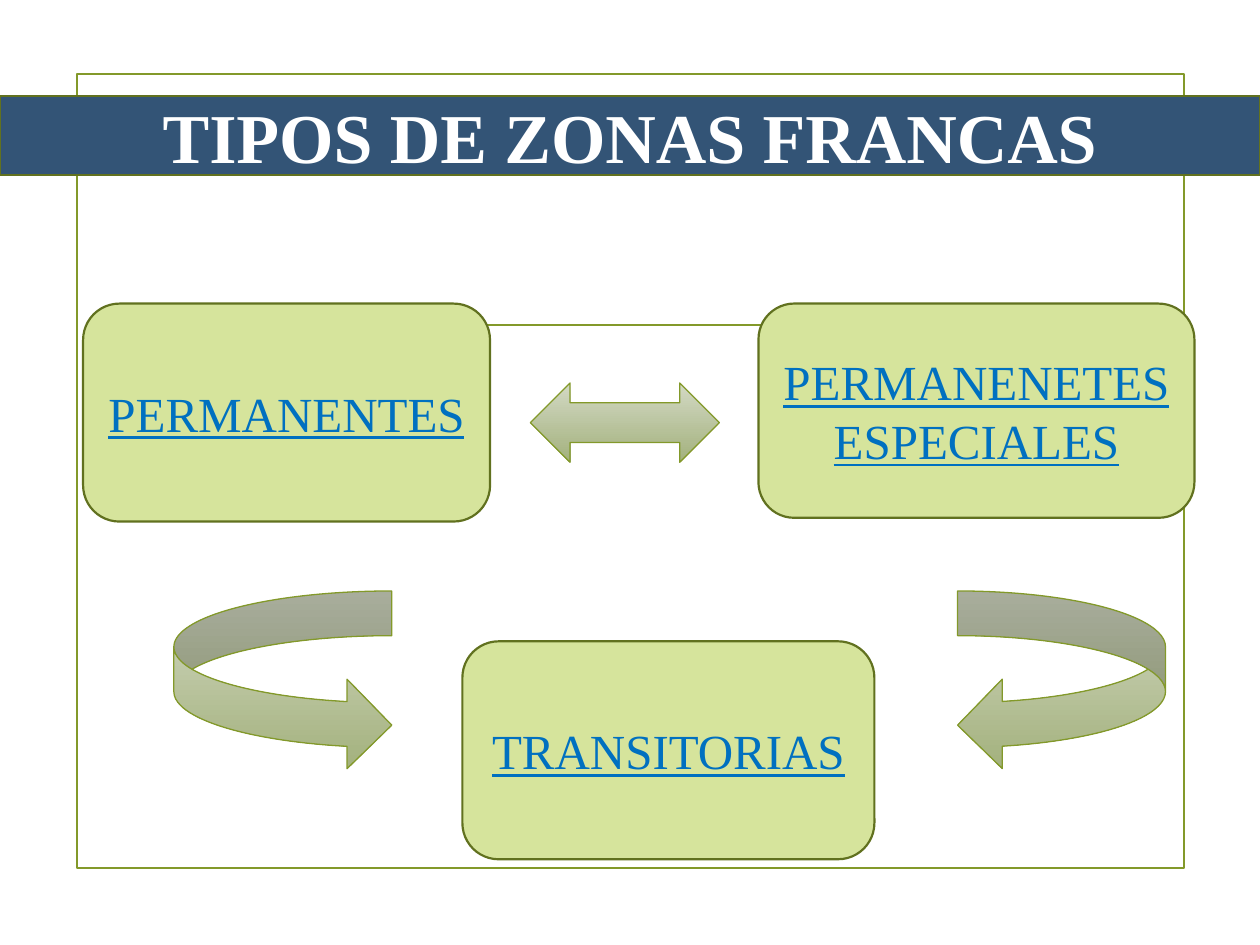
from typing import NamedTuple

from pptx import Presentation
from pptx.dml.color import RGBColor
from pptx.enum.shapes import MSO_CONNECTOR, MSO_SHAPE as Shp
from pptx.enum.text import MSO_ANCHOR, PP_ALIGN
from pptx.oxml.ns import qn
from pptx.util import Inches, Pt

OLIVE, DARK_OLIVE, NAVY, LIME = "83992A", "61711F", "335476", "D6E49C"
ARROW_GRADIENT = ("D3D9C4", "A3B17D")
FONT = "Times New Roman"
TITLE_FORMAT = {"name": FONT, "size": Pt(40), "bold": True}
TYPE_FORMAT = {"name": FONT, "size": Pt(28), "underline": True}


class Box(NamedTuple):
    left: float
    top: float
    width: float
    height: float


class ZoneType(NamedTuple):
    text: str
    box: Box


class Arrow(NamedTuple):
    preset: Shp
    box: Box


ZONE_TYPES = [
    ZoneType("PERMANENTES", Box(0.66, 2.41, 3.23, 1.73)),
    ZoneType("PERMANENETES ESPECIALES", Box(6.02, 2.41, 3.46, 1.7)),
    ZoneType("TRANSITORIAS", Box(3.67, 5.09, 3.27, 1.73)),
]
ARROWS = [
    Arrow(Shp.CURVED_RIGHT_ARROW, Box(1.38, 4.69, 1.73, 1.42)),
    Arrow(Shp.CURVED_LEFT_ARROW, Box(7.6, 4.69, 1.65, 1.42)),
    Arrow(Shp.LEFT_RIGHT_ARROW, Box(4.21, 3.04, 1.5, 0.63)),
]


def rgb(value: str) -> RGBColor:
    return RGBColor.from_string(value)


def set_line(line, color: str, width: float) -> None:
    line.color.rgb = rgb(color)
    line.width = Pt(width)


def add_outlined(s, preset: Shp, box: Box, color: str, width: float = 1.25):
    """Add a shape without shadow; its fill is left to the caller."""
    sp = s.shapes.add_shape(preset, *map(Inches, box))
    sp.shadow.inherit = False
    set_line(sp.line, color, width)
    return sp


def add_label(s, preset: Shp, box: Box, fill: str, text: str, color: str, fmt: dict) -> None:
    sp = add_outlined(s, preset, box, DARK_OLIVE)
    sp.fill.solid()
    sp.fill.fore_color.rgb = rgb(fill)
    tf = sp.text_frame
    tf.word_wrap = True
    tf.vertical_anchor = MSO_ANCHOR.MIDDLE
    p = tf.paragraphs[0]
    p.alignment = PP_ALIGN.CENTER
    r = p.add_run()
    r.text = text
    r.font.color.rgb = rgb(color)
    for name, value in fmt.items():
        setattr(r.font, name, value)


def add_arrow(s, arrow: Arrow) -> None:
    fill = add_outlined(s, arrow.preset, arrow.box, OLIVE, 0.75).fill
    fill.gradient()
    fill.gradient_angle = 270
    for stop, color in zip(fill.gradient_stops, ARROW_GRADIENT):
        stop.color.rgb = rgb(color)
    for stop, position in zip(fill.gradient_stops, (0, 1)):
        stop.position = position


def add_frame(s) -> None:
    """Draw the page border and the rule across it."""
    add_outlined(s, Shp.RECTANGLE, Box(0.61, 0.59, 8.79, 6.3), OLIVE).fill.background()
    ends = map(Inches, (1.4, 2.58, 8.61, 2.58))
    rule = s.shapes.add_connector(MSO_CONNECTOR.STRAIGHT, *ends)
    set_line(rule.line, OLIVE, 1.25)
    sp_pr = rule._element.spPr
    sp_pr.append(sp_pr.makeelement(qn("a:effectLst"), {}))


def main() -> None:
    prs = Presentation()
    prs.slide_width, prs.slide_height = Inches(10), Inches(7.5)
    s = prs.slides.add_slide(prs.slide_layouts[6])
    add_frame(s)
    add_label(s, Shp.FLOWCHART_PROCESS, Box(0, 0.76, 10, 0.63), NAVY,
              "TIPOS DE ZONAS FRANCAS", "FFFFFF", TITLE_FORMAT)
    for zone in ZONE_TYPES:
        add_label(s, Shp.ROUNDED_RECTANGLE, zone.box, LIME, zone.text, "0070C0", TYPE_FORMAT)
    for arrow in ARROWS:
        add_arrow(s, arrow)
    prs.save("out.pptx")


if __name__ == "__main__":
    main()
